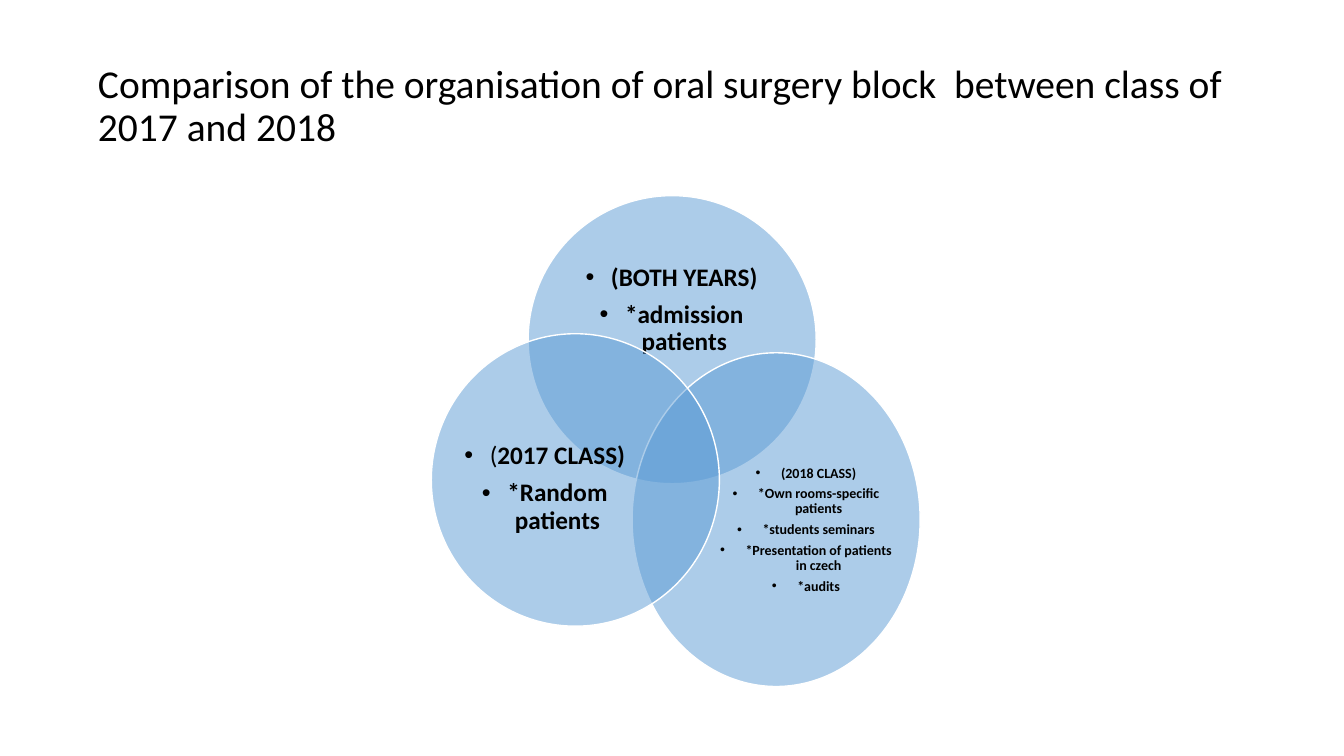
"""Builds a slide with three circles that compare two class years."""
from lxml.etree import SubElement
from pptx import Presentation
from pptx.dml.color import RGBColor
from pptx.enum.shapes import MSO_SHAPE
from pptx.enum.text import MSO_ANCHOR, PP_ALIGN
from pptx.oxml.ns import qn
from pptx.util import Cm, Pt

BLACK = RGBColor(0x00, 0x00, 0x00)
WHITE = RGBColor(0xFF, 0xFF, 0xFF)
BLUE = RGBColor(0x5B, 0x9B, 0xD5)


class Board:
    font = "Calibri"
    spacing = 0.9
    indent = Cm(0.64)

    def __init__(self, slide):
        self.slide = slide

    def frame(self, box, inset):
        text = self.slide.shapes.add_textbox(*map(Cm, box)).text_frame
        text.word_wrap = True
        text.vertical_anchor = MSO_ANCHOR.MIDDLE
        text.margin_left = text.margin_right = Cm(inset)
        text.margin_top = text.margin_bottom = Cm(inset)
        return text

    def add_runs(self, para, runs, size):
        para.line_spacing = self.spacing
        for words, bold in runs:
            run = para.add_run()
            run.text = words
            run.font.name = self.font
            run.font.size = Pt(size)
            run.font.bold = bold
            run.font.color.rgb = BLACK

    def title(self, box, words, size):
        para = self.frame(box, 0.13).paragraphs[0]
        self.add_runs(para, [(words, False)], size)

    def circle(self, box):
        oval = self.slide.shapes.add_shape(MSO_SHAPE.OVAL, *map(Cm, box))
        oval.shadow.inherit = False
        oval.fill.solid()
        oval.fill.fore_color.rgb = BLUE
        color = oval._element.spPr.find(qn("a:solidFill")).find(qn("a:srgbClr"))
        SubElement(color, qn("a:alpha"), val="50000")
        oval.line.color.rgb = WHITE
        oval.line.width = Pt(1)

    def bullets(self, box, items, size, before):
        text = self.frame(box, 0)
        for place, runs in enumerate(items):
            para = text.add_paragraph() if place else text.paragraphs[0]
            para.alignment = PP_ALIGN.CENTER
            para.space_before = Pt(before)
            self.add_runs(para, runs, size)
            props = para._p.get_or_add_pPr()
            props.set("marL", str(self.indent))
            props.set("indent", str(-self.indent))
            SubElement(props, qn("a:buFont"), typeface="Arial")
            SubElement(props, qn("a:buChar"), char="•")


GROUPS = [
    ((13.31, 4.93, 7.26, 7.26), (14.27, 5.99, 5.31, 3.66), 18, 7,
     [[("(BOTH YEARS)", True)], [("*admission patients", True)]]),
    ((15.93, 8.89, 7.26, 8.41), (18.14, 11.2, 4.34, 4.32), 10, 4,
     [[("(2018 CLASS)", True)],
      [("*Own rooms-specific patients", True)],
      [("*students seminars", True)],
      [("*Presentation of patients in czech", True)],
      [("*audits", True)]]),
    ((10.87, 8.41, 7.26, 7.37), (11.56, 10.82, 4.34, 3), 18, 7,
     [[("(", False), ("2017 CLASS)", True)], [("*Random patients", True)]]),
]


def main():
    deck = Presentation()
    deck.slide_width, deck.slide_height = Cm(33.87), Cm(19.05)
    board = Board(deck.slides.add_slide(deck.slide_layouts[6]))
    board.title(
        (2.34, 1.4, 29.21, 2.59),
        "Comparison of the organisation of oral surgery block  "
        "between class of 2017 and 2018", 28.2)
    for oval, box, size, before, items in GROUPS:
        board.circle(oval)
        board.bullets(box, items, size, before)
    deck.save("out.pptx")


if __name__ == "__main__":
    main()
